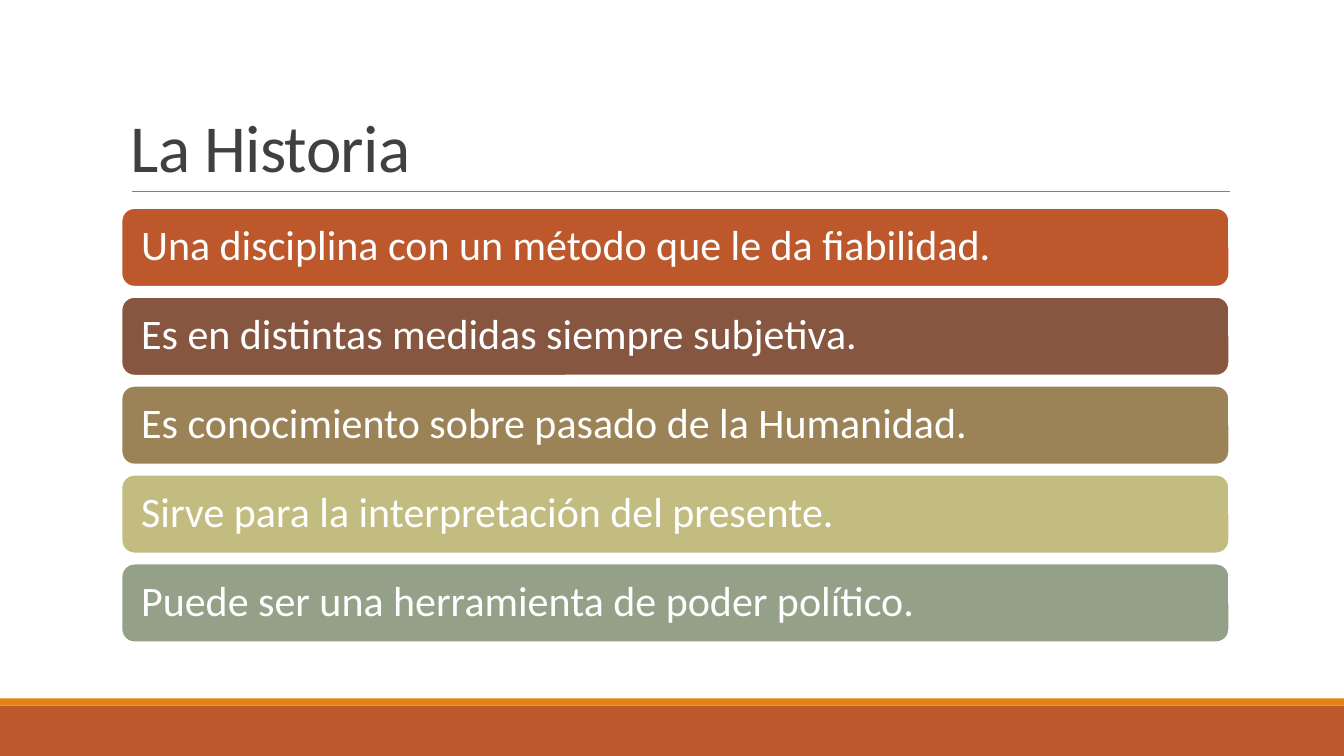
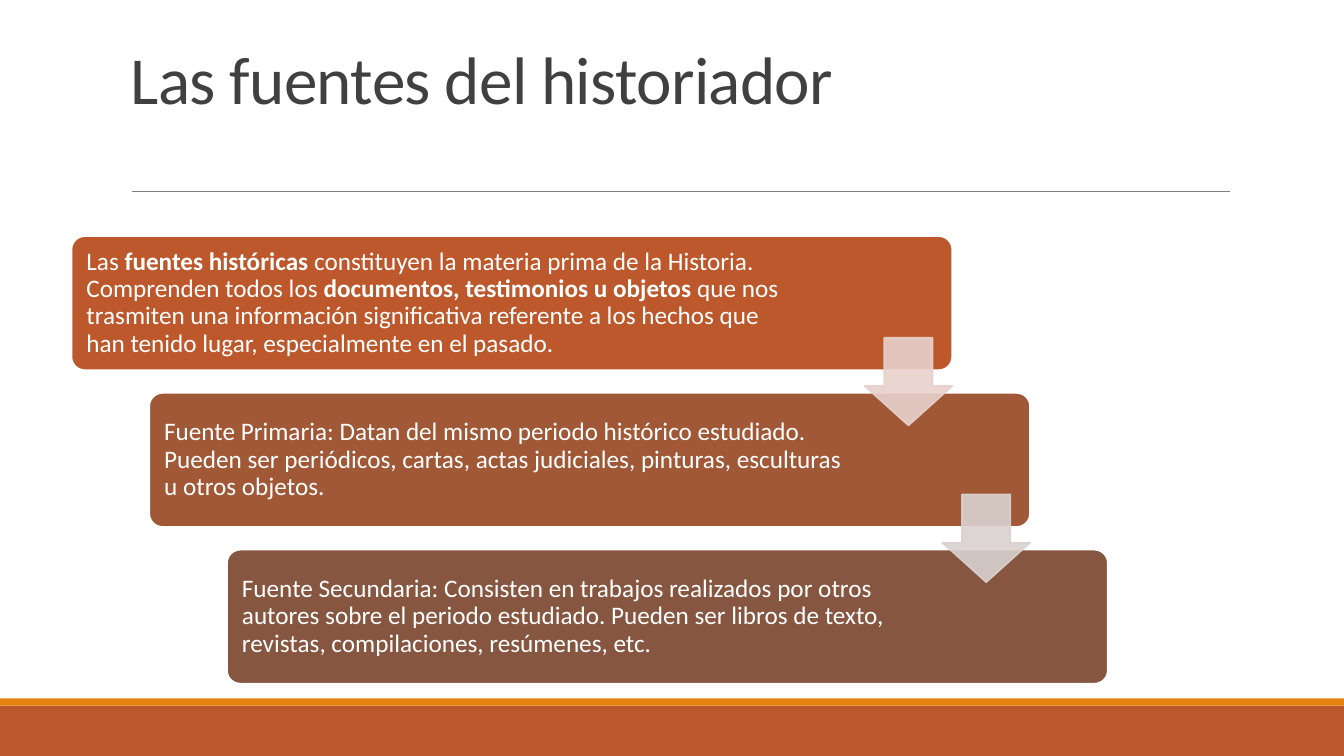
import pptx
import pptx.util
import pptx.dml.color
import pptx.enum.shapes
import pptx.enum.text
import pptx.oxml.ns
import pptx.oxml.xmlchemy

Cm, Pt = pptx.util.Cm, pptx.util.Pt
SHAPE = pptx.enum.shapes.MSO_SHAPE
ANCHOR = pptx.enum.text.MSO_ANCHOR
qn = pptx.oxml.ns.qn
new_element = pptx.oxml.xmlchemy.OxmlElement

# Shared look
FONT = "Calibri"
WHITE, INK, RULE = "FFFFFF", "404040", "808080"
RUST, ORANGE, BROWN = "BD582C", "E48312", "865640"
SLIDE_W, SLIDE_H = 33.87, 19.05
BOX_LEFT, BOX_W = 3.05, 27.94


def paint(fmt, color, alpha=None):
    """Make a fill solid in a hex colour, with opacity in percent."""
    fmt.solid()
    fmt.fore_color.rgb = pptx.dml.color.RGBColor.from_string(color)
    if alpha is not None:
        for clr in fmt._xPr.iter(qn("a:srgbClr")):
            if clr.find(qn("a:alpha")) is None:
                a = new_element("a:alpha")
                a.set("val", str(alpha * 1000))
                clr.append(a)


def add_box(s, kind, x, y, w, h, fill, line=None, weight=1.25, alpha=None):
    sp = s.shapes.add_shape(kind, Cm(x), Cm(y), Cm(w), Cm(h))
    sp.shadow.inherit = False
    paint(sp.fill, fill, alpha)
    if line:
        paint(sp.line.fill, line, alpha)
        sp.line.width = Pt(weight)
    else:
        sp.line.fill.background()
    return sp


def write(sp, runs, size, color, spacing, anchor, insets):
    """Fill a shape with one paragraph of (text, bold) runs."""
    tf = sp.text_frame
    tf.word_wrap = True
    tf.vertical_anchor = anchor
    tf.margin_left, tf.margin_top, tf.margin_right, tf.margin_bottom = map(Cm, insets)
    p = tf.paragraphs[0]
    p.alignment = pptx.enum.text.PP_ALIGN.LEFT
    p.line_spacing = spacing
    p.font.name, p.font.size = FONT, Pt(size)
    paint(p.font.fill, color)
    for text, bold in runs:
        r = p.add_run()
        r.text = text
        if bold:
            r.font.bold = True
    return p


def add_frame(prs, title, raise_by=0):
    """New slide with rule, title and footer bands; raise_by lifts the title."""
    s = prs.slides.add_slide(prs.slide_layouts[6])
    rule = s.shapes.add_connector(pptx.enum.shapes.MSO_CONNECTOR.STRAIGHT,
                                  Cm(3.33), Cm(4.82), Cm(31), Cm(4.82))
    paint(rule.line.fill, RULE)
    rule.line.width = Pt(0.5)
    rule._element.spPr.append(new_element("a:effectLst"))

    sp = s.shapes.add_textbox(Cm(BOX_LEFT), Cm(0.79), Cm(BOX_W), Cm(4.04))
    p = write(sp, [(title, False)], 48, INK, 0.85, ANCHOR.BOTTOM,
              (0.25, 0.13, 0.25, 0.13 + raise_by))
    p.runs[0].font._element.set("spc", "-50")

    add_box(s, SHAPE.RECTANGLE, 0, 17.78, SLIDE_W, 1.27, RUST)
    add_box(s, SHAPE.RECTANGLE, 0, 17.6, SLIDE_W, 0.18, ORANGE)
    return s


def add_bars(s, x, y, w, bars, h=2.01, pitch=2.24):
    """Stack of full-width bars, one statement each."""
    for i, (text, color) in enumerate(bars):
        sp = add_box(s, SHAPE.ROUNDED_RECTANGLE, x, y + i * pitch, w, h, color, WHITE, 2)
        write(sp, [(text, False)], 30, WHITE, 0.9, ANCHOR.MIDDLE, (0.41, 0.4, 0.41, 0.4))


def add_staircase(s, x, y, cards, arrows, w=22.2, h=3.38, dx=1.96, dy=3.95):
    """Cards stepping down to the right, with an arrow from each to the next."""
    for i, (runs, color) in enumerate(cards):
        sp = add_box(s, SHAPE.ROUNDED_RECTANGLE, x + i * dx, y + i * dy, w, h, color, WHITE)
        sp.adjustments[0] = 0.1
        right = 4.42 if i else 3.71
        write(sp, runs, 18, WHITE, 0.9, ANCHOR.MIDDLE, (0.28, 0.28, right, 0.28))
    side = 2.21
    for i, color in enumerate(arrows):
        sp = add_box(s, SHAPE.DOWN_ARROW, x + w - side + i * dx, y + 2.56 + i * dy,
                     side, side, color, color, alpha=90)
        sp.adjustments[0], sp.adjustments[1] = 0.55, 0.45


def main():
    prs = pptx.Presentation()
    prs.slide_width, prs.slide_height = Cm(SLIDE_W), Cm(SLIDE_H)

    # What history is
    s = add_frame(prs, "La Historia")
    add_bars(s, BOX_LEFT, 5.23, BOX_W, [
        ("Una disciplina con un método que le da fiabilidad.", RUST),
        ("Es en distintas medidas siempre subjetiva.", BROWN),
        ("Es conocimiento sobre pasado de la Humanidad.", "9B8357"),
        ("Sirve para la interpretación del presente.", "C2BC80"),
        ("Puede ser una herramienta de poder político.", "94A088"),
    ])

    # The historian's sources
    s = add_frame(prs, "Las fuentes del historiador", raise_by=1.99)
    add_staircase(s, 1.8, 5.95, [
        ([("Las ", False), ("fuentes históricas", True),
          (" constituyen la materia prima de la Historia. Comprenden todos los ", False),
          ("documentos, testimonios u objetos", True),
          (" que nos trasmiten una información significativa referente a los hechos "
           "que han tenido lugar, especialmente en el pasado.", False)], RUST),
        ([("Fuente Primaria: Datan del mismo periodo histórico estudiado. Pueden ser "
           "periódicos, cartas, actas judiciales, pinturas, esculturas u otros objetos.",
           False)], "A05837"),
        ([("Fuente Secundaria: Consisten en trabajos realizados por otros autores sobre "
           "el periodo estudiado. Pueden ser libros de texto, revistas, compilaciones, "
           "resúmenes, etc.", False)], BROWN),
    ], ["E8D1CD", "D9D1CF"])

    prs.save("out.pptx")


if __name__ == "__main__":
    main()
